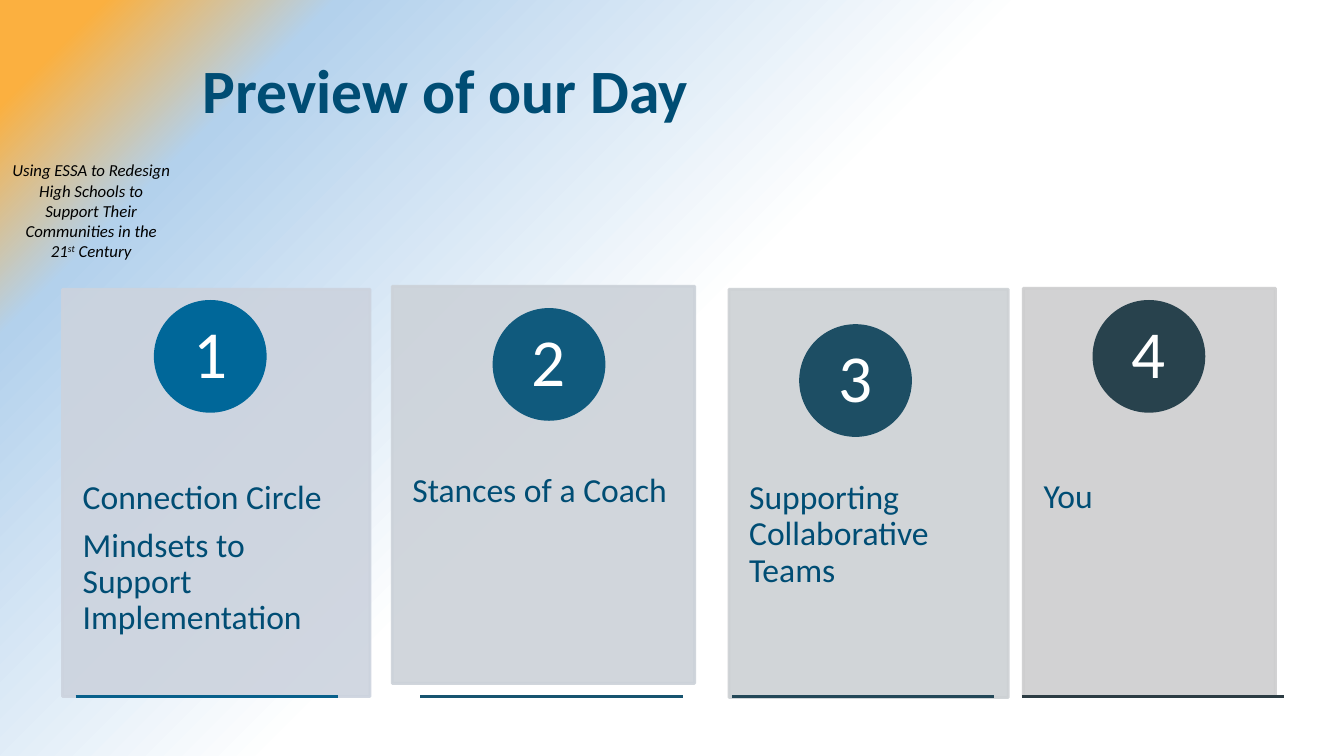
from lxml import etree
from pptx import Presentation
from pptx.dml.color import RGBColor
from pptx.enum.shapes import MSO_CONNECTOR as Connector, MSO_SHAPE as Shape
from pptx.enum.text import MSO_ANCHOR as Anchor, MSO_AUTO_SIZE as AutoSize, PP_ALIGN as Align
from pptx.oxml import parse_xml
from pptx.oxml.ns import nsdecls, qn
from pptx.util import Inches, Pt

FONT = "Calibri"
NAVY = "004D74"
CIRCLE_SIZE = 1.09
NUMBER_SIZE = 0.77
RULE_TOP, RULE_WIDTH = 6.91, 2.6

# Card box, circle position, rule left, colours of card, circle and rule, lines
CARDS = [
    ((0.62, 2.87, 3.05, 4.04), (1.54, 2.99), 0.75, ("CCD3DE", "006799", "08608B"),
     ["Connection Circle", "Mindsets to Support Implementation"]),
    ((3.89, 2.84, 3.0, 3.94), (4.9, 3.07), 4.17, ("CCD2D9", "105A7D", "175470"),
     ["Stances of a Coach"]),
    ((7.23, 2.87, 2.77, 4.05), (7.94, 3.23), 7.26, ("CDD1D4", "1D4E64", "234858"),
     ["Supporting Collaborative Teams"]),
    ((10.15, 2.86, 2.5, 4.05), (10.85, 2.99), 10.14, ("CECECF", "28424D", "2C3C43"),
     ["You"]),
]


def color(value):
    return RGBColor.from_string(value)


def inches(box):
    return [Inches(value) for value in box]


def set_alpha(color_format_parent, percent):
    for element in color_format_parent.iter(qn("a:srgbClr")):
        etree.SubElement(element, qn("a:alpha")).set("val", str(percent * 1000))


def write_text(frame, lines, size, text_color, align=Align.LEFT, anchor=Anchor.TOP,
               insets=(0.1, 0.05), spacing=0.9, after=0, bold=False, italic=False):
    """Each line is a list of (text, superscript) runs or a plain string."""
    frame.word_wrap = True
    frame.auto_size = AutoSize.NONE
    frame.vertical_anchor = anchor
    frame.margin_left = frame.margin_right = Inches(insets[0])
    frame.margin_top = frame.margin_bottom = Inches(insets[1])
    for index, line in enumerate(lines):
        paragraph = frame.add_paragraph() if index else frame.paragraphs[0]
        paragraph.alignment = align
        paragraph.line_spacing = spacing
        paragraph.space_before = Pt(0)
        paragraph.space_after = Pt(after)
        for text, raised in [(line, False)] if isinstance(line, str) else line:
            run = paragraph.add_run()
            run.text = text
            font = run.font
            font.name, font.size = FONT, Pt(size)
            font.bold, font.italic = bold, italic
            font.color.rgb = color(text_color)
            if raised:
                run._r.get_or_add_rPr().set("baseline", "30000")


def add_filled(slide, kind, box, fill, alpha=None):
    shape = slide.shapes.add_shape(kind, *inches(box))
    shape.shadow.inherit = False
    shape.fill.solid()
    shape.fill.fore_color.rgb = color(fill)
    shape.line.color.rgb = color(fill)
    shape.line.width = Pt(2)
    if alpha:
        set_alpha(shape._element.spPr, alpha)
    return shape


def add_text(slide, box, lines, **text_format):
    shape = slide.shapes.add_textbox(*inches(box))
    write_text(shape.text_frame, lines, **text_format)


def add_background(slide):
    stops = [(0, "FFFFFF", 100), (51, "FFFFFF", 100), (84, "B3D1EC", 50), (95, "FBB040", 100)]
    stop_xml = "".join(
        f'<a:gs pos="{position * 1000}"><a:srgbClr val="{value}">'
        f'<a:alpha val="{alpha * 1000}"/></a:srgbClr></a:gs>'
        for position, value, alpha in stops)
    background = parse_xml(
        f'<p:bg {nsdecls("p", "a")}><p:bgPr><a:gradFill rotWithShape="1">'
        f'<a:gsLst>{stop_xml}</a:gsLst><a:path path="circle">'
        '<a:fillToRect l="100000" t="100000"/></a:path>'
        '<a:tileRect r="-100000" b="-100000"/></a:gradFill>'
        '<a:effectLst/></p:bgPr></p:bg>')
    slide._element.cSld.insert(0, background)


def add_title(slide, box, text):
    title = slide.shapes.title
    title.left, title.top, title.width, title.height = inches(box)
    write_text(title.text_frame, [text], size=44, text_color=NAVY,
               anchor=Anchor.MIDDLE, bold=True)


def add_side_caption(slide, box):
    caption = [("Using ESSA to Redesign High Schools to Support Their "
                "Communities in the 21", False), ("st", True), (" Century", False)]
    add_text(slide, box, [caption], size=12, text_color="000000",
             align=Align.CENTER, spacing=1.0, italic=True)


def add_rule(slide, left, top, width, line_color):
    rule = slide.shapes.add_connector(Connector.STRAIGHT, *inches((left, top, left + width, top)))
    rule.line.color.rgb = color(line_color)
    rule.line.width = Pt(2)
    etree.SubElement(rule._element.spPr, qn("a:effectLst"))


def add_card(slide, box, number, circle_at, rule_left, colors, lines):
    left, top, width, height = box
    card_color, circle_color, rule_color = colors
    add_filled(slide, Shape.RECTANGLE, box, card_color, alpha=90)
    add_text(slide, (left, top + 0.38 * height, width, 0.6 * height), lines,
             size=24, text_color=NAVY, insets=(0.2, 0.36), after=8.4)

    # Numbered circle
    circle_left, circle_top = circle_at
    add_filled(slide, Shape.OVAL, (circle_left, circle_top, CIRCLE_SIZE, CIRCLE_SIZE), circle_color)
    inset = (CIRCLE_SIZE - NUMBER_SIZE) / 2
    add_text(slide, (circle_left + inset, circle_top + inset, NUMBER_SIZE, NUMBER_SIZE),
             [str(number)], size=48, text_color="FFFFFF", align=Align.CENTER,
             anchor=Anchor.MIDDLE, insets=(0.09, 0.01))

    add_rule(slide, rule_left, RULE_TOP, RULE_WIDTH, rule_color)


def main():
    presentation = Presentation()
    presentation.slide_width = Inches(13.33)
    presentation.slide_height = Inches(7.5)
    slide = presentation.slides.add_slide(presentation.slide_layouts[5])
    add_background(slide)
    add_side_caption(slide, (0.02, 1.54, 1.77, 1.11))
    add_title(slide, (1.91, 0.35, 7.14, 1.15), "Preview of our Day")
    for number, (box, circle_at, rule_left, colors, lines) in enumerate(CARDS, 1):
        add_card(slide, box, number, circle_at, rule_left, colors, lines)
    presentation.save("out.pptx")


if __name__ == "__main__":
    main()
